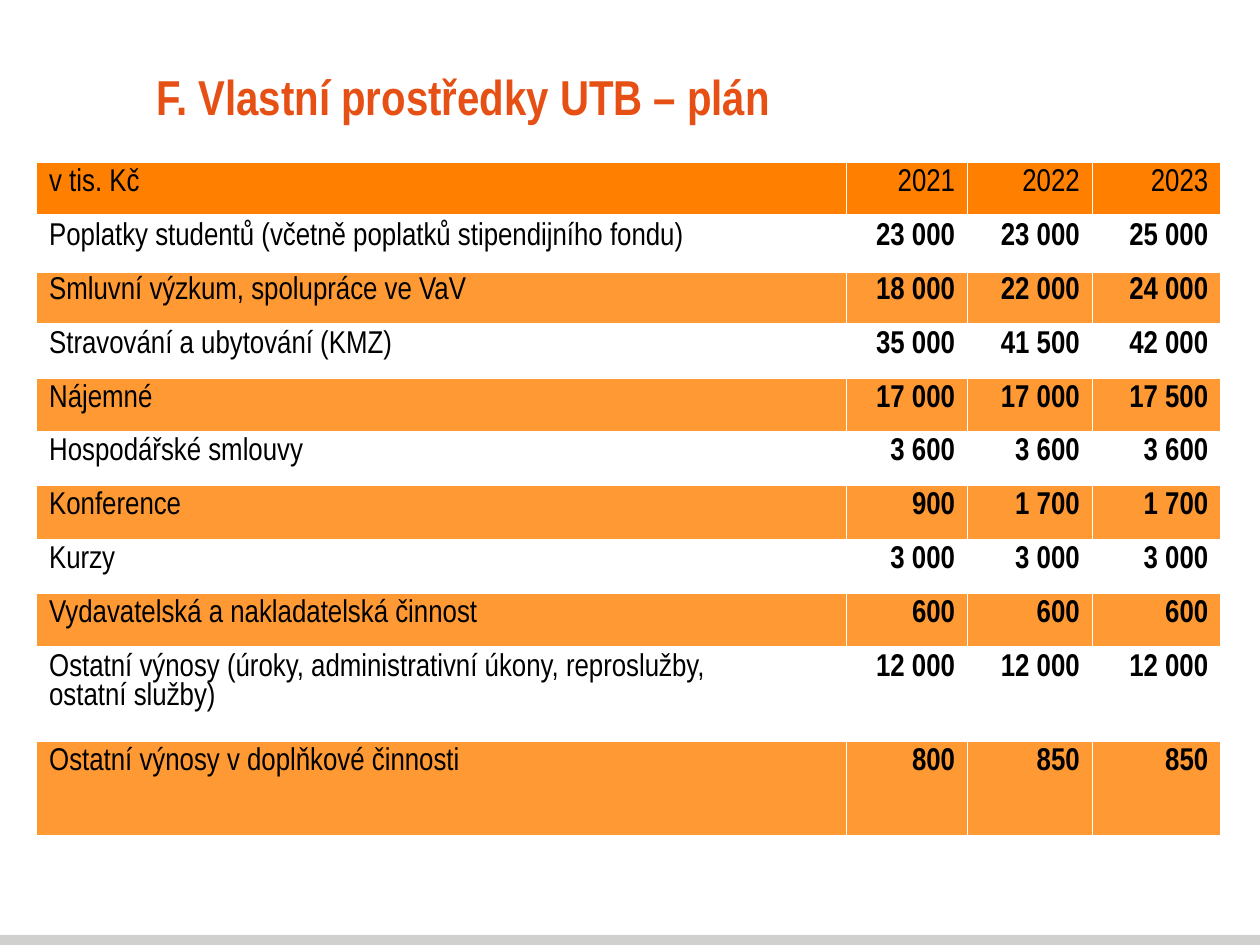
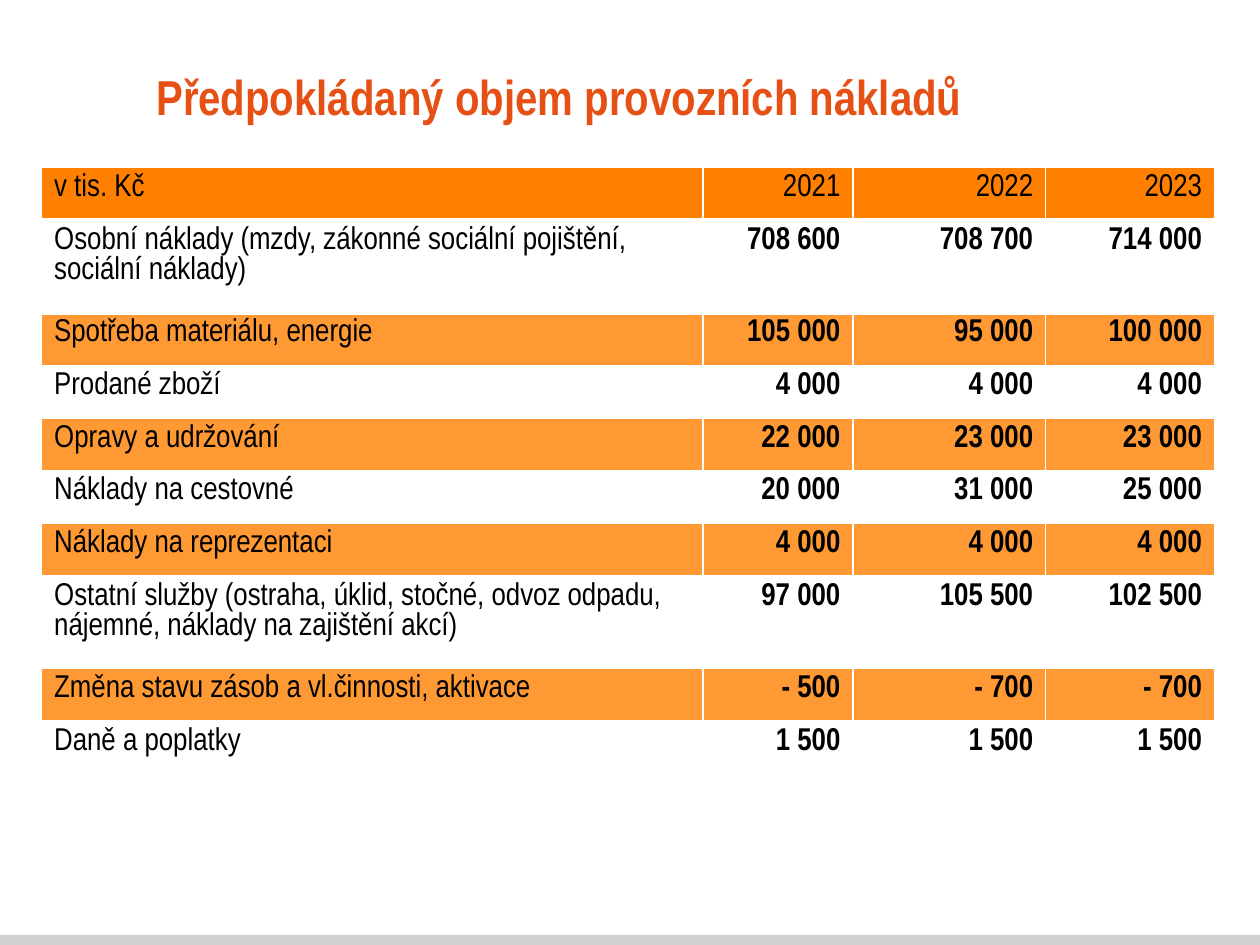
from dataclasses import dataclass

from lxml import etree
from pptx import Presentation
from pptx.dml.color import RGBColor
from pptx.enum.shapes import MSO_SHAPE
from pptx.enum.text import MSO_ANCHOR, PP_ALIGN
from pptx.oxml.ns import qn
from pptx.util import Inches, Pt

LEFT, RIGHT = PP_ALIGN.LEFT, PP_ALIGN.RIGHT
MIDDLE = MSO_ANCHOR.MIDDLE
RECT = MSO_SHAPE.RECTANGLE
TITLE_ONLY = 5
WIDE, HIGH = Inches(10), Inches(7.5)


@dataclass(frozen=True)
class Theme:
    font: str = "Arial Narrow"
    title: str = "E65014"
    text: str = "000000"
    head: str = "FF8001"
    band: str = "FF9933"
    plain: str = "FFFFFF"
    foot: str = "D0D0CE"
    title_size: int = 28
    cell_size: int = 18
    rule: int = 3
    tall: float = 1.75


THEME = Theme()

INCOME = [
    ("v tis. Kč", "2021", "2022", "2023"),
    ("Poplatky studentů (včetně poplatků stipendijního fondu)", "23 000", "23 000", "25 000"),
    ("Smluvní výzkum, spolupráce ve VaV", "18 000", "22 000", "24 000"),
    ("Stravování a ubytování (KMZ)", "35 000", "41 500", "42 000"),
    ("Nájemné", "17 000", "17 000", "17 500"),
    ("Hospodářské smlouvy", "3 600", "3 600", "3 600"),
    ("Konference", "900", "1 700", "1 700"),
    ("Kurzy", "3 000", "3 000", "3 000"),
    ("Vydavatelská a nakladatelská činnost", "600", "600", "600"),
    ("Ostatní výnosy (úroky, administrativní úkony, reproslužby,\nostatní služby)",
     "12 000", "12 000", "12 000"),
    ("Ostatní výnosy v doplňkové činnosti", "800", "850", "850"),
]

COSTS = [
    ("v tis. Kč", "2021", "2022", "2023"),
    ("Osobní náklady (mzdy, zákonné sociální pojištění,\nsociální náklady)",
     "708 600", "708 700", "714 000"),
    ("Spotřeba materiálu, energie", "105 000", "95 000", "100 000"),
    ("Prodané zboží", "4 000", "4 000", "4 000"),
    ("Opravy a udržování", "22 000", "23 000", "23 000"),
    ("Náklady na cestovné", "20 000", "31 000", "25 000"),
    ("Náklady na reprezentaci", "4 000", "4 000", "4 000"),
    ("Ostatní služby (ostraha, úklid, stočné, odvoz odpadu,\nnájemné, náklady na zajištění akcí)",
     "97 000", "105 500", "102 500"),
    ("Změna stavu zásob a vl.činnosti, aktivace", "- 500", "- 700", "- 700"),
    ("Daně a poplatky", "1 500", "1 500", "1 500"),
    ("",) * 4,
    ("",) * 4,
]


def paint(fill, color):
    fill.solid()
    fill.fore_color.rgb = RGBColor.from_string(color)


def style(para, size, color, bold, align):
    para.alignment = align
    font = para.font
    font.name, font.size, font.bold = THEME.font, Pt(size), bold
    font.color.rgb = RGBColor.from_string(color)


def add_foot(deck, slide):
    depth = Inches(0.08)
    bar = slide.shapes.add_shape(RECT, 0, HIGH - depth, WIDE, depth)
    bar.shadow.inherit = False
    paint(bar.fill, THEME.foot)
    bar.line.fill.background()
    bar.element.nvSpPr.cNvPr.set("id", "99")
    deck.slide_master.shapes.element.append(bar.element)


def add_title(slide, text):
    title = slide.shapes.title
    title.left, title.top = Inches(1.14), Inches(0.36)
    title.width, title.height = Inches(8.11), Inches(0.81)
    frame = title.text_frame
    frame.text = text
    frame.vertical_anchor = MIDDLE
    para = frame.paragraphs[0]
    props = para._p.get_or_add_pPr()
    props.set("marL", str(Inches(0.2)))
    props.set("indent", str(-Inches(0.2)))
    style(para, THEME.title_size, THEME.title, True, LEFT)


def add_rule(cell, side):
    line = etree.Element(qn(f"a:{side}"), w=str(Pt(THEME.rule)))
    solid = etree.SubElement(line, qn("a:solidFill"))
    etree.SubElement(solid, qn("a:srgbClr"), val=THEME.plain)
    cell._tc.get_or_add_tcPr().insert(0, line)


def fill_cell(cell, text, row, col, color):
    paint(cell.fill, color)
    if row < 2:
        add_rule(cell, "lnT" if row else "lnB")
    if not text:
        return
    cell.text = text
    for para in cell.text_frame.paragraphs:
        style(para, THEME.cell_size, THEME.text, row > 0 and col > 0, RIGHT if col else LEFT)


def row_color(row, texts):
    if row == 0:
        return THEME.head
    return THEME.band if row % 2 == 0 and any(texts) else THEME.plain


def add_grid(slide, rows, left, top, height, widths, tall):
    shape = slide.shapes.add_table(len(rows), len(widths), Inches(left), Inches(top),
                                   Inches(sum(widths)), Inches(height))
    grid = shape.table
    grid.horz_banding = False
    for col, width in zip(grid.columns, widths):
        col.width = Inches(width)
    shares = [THEME.tall if row in tall else 1 for row in range(len(rows))]
    for row, share in zip(grid.rows, shares):
        row.height = Inches(height * share / sum(shares))
    for row, texts in enumerate(rows):
        color = row_color(row, texts)
        for col, text in enumerate(texts):
            fill_cell(grid.cell(row, col), text, row, col, color)


def add_page(deck, title):
    slide = deck.slides.add_slide(deck.slide_layouts[TITLE_ONLY])
    add_title(slide, title)
    return slide


def main():
    deck = Presentation()
    deck.slide_width, deck.slide_height = WIDE, HIGH
    income = add_page(deck, "F. Vlastní prostředky UTB – plán")
    add_foot(deck, income)
    add_grid(income, INCOME, 0.29, 1.29, 5.34, (6.43, 0.96, 0.99, 1.02), (9, 10))
    costs = add_page(deck, "Předpokládaný objem provozních nákladů")
    add_grid(costs, COSTS, 0.33, 1.33, 5.65, (5.25, 1.19, 1.53, 1.34), (1, 7))
    deck.save("out.pptx")


if __name__ == "__main__":
    main()
